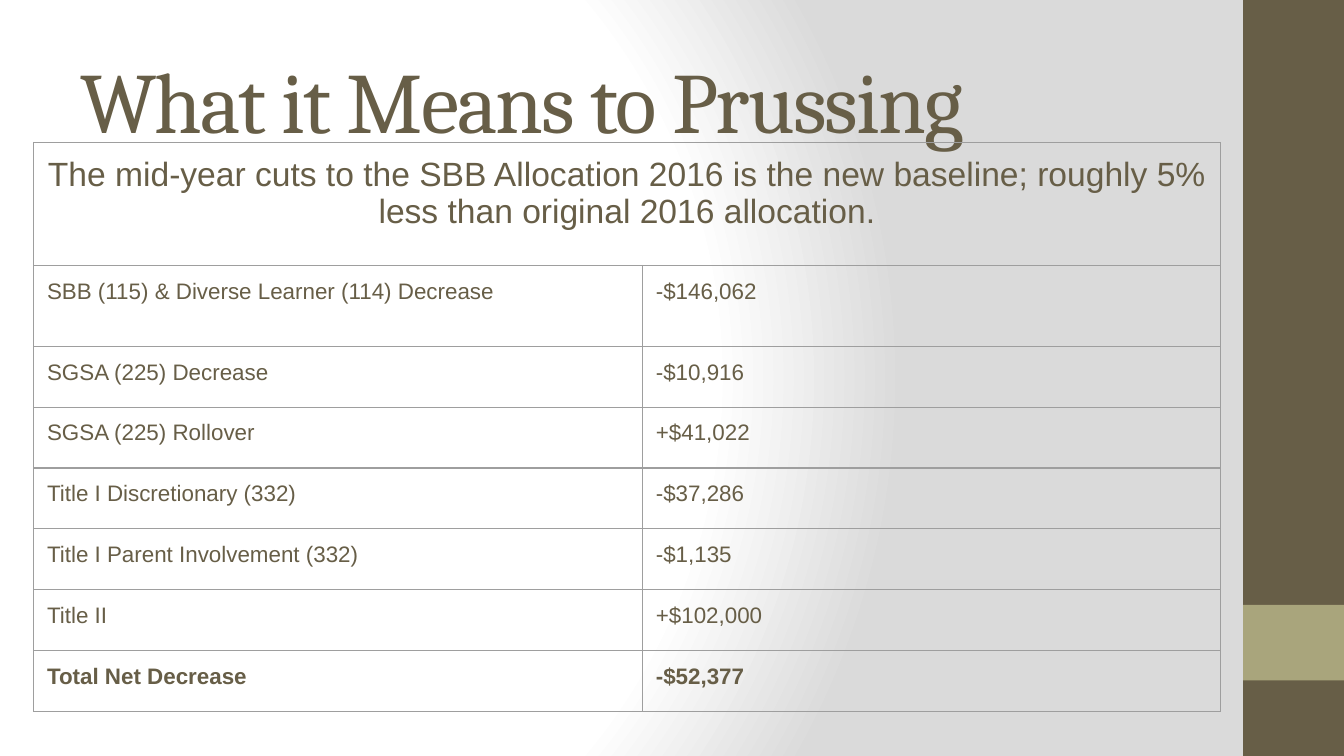
from lxml import etree
from pptx import Presentation
from pptx.dml.color import RGBColor
from pptx.enum.shapes import MSO_SHAPE
from pptx.enum.text import MSO_ANCHOR, PP_ALIGN
from pptx.oxml import parse_xml
from pptx.oxml.ns import qn
from pptx.util import Inches, Pt

RECT = MSO_SHAPE.RECTANGLE
BOTTOM = MSO_ANCHOR.BOTTOM
LEFT, CENTER = PP_ALIGN.LEFT, PP_ALIGN.CENTER

BROWN = RGBColor(0x67, 0x5E, 0x47)
OLIVE = RGBColor(0xA9, 0xA5, 0x7C)
WHITE = RGBColor(0xFF, 0xFF, 0xFF)
SILVER = RGBColor(0xDA, 0xDA, 0xDA)
GRAY = RGBColor(0x9E, 0x9E, 0x9E)

A_NS = 'xmlns:a="http://schemas.openxmlformats.org/drawingml/2006/main"'
COLS, ROWS = 40, 22.5
UNIT = 0.25  # inches per grid column and row

HEADING = ("The mid-year cuts to the SBB Allocation 2016 is the new baseline; "
           "roughly 5% less than original 2016 allocation.")
BUDGET = [
    ("SBB (115) & Diverse Learner (114) Decrease", "-$146,062"),
    ("SGSA (225) Decrease", "-$10,916"),
    ("SGSA (225) Rollover", "+$41,022"),
    ("Title I Discretionary (332)", "-$37,286"),
    ("Title I Parent Involvement (332)", "-$1,135"),
    ("Title II", "+$102,000"),
    ("Total Net Decrease", "-$52,377"),
]


def grid(n):
    return Inches(n * UNIT)


class Deck:
    """Holds the style and the current slide; lengths are grid units."""
    title_font, body_font = "Cambria", "Arial"
    inset = Inches(0.1)

    def __init__(self):
        self.prs = Presentation()
        self.prs.slide_width, self.prs.slide_height = grid(COLS), grid(ROWS)
        self.s = self.prs.slides.add_slide(self.prs.slide_layouts[6])

    def radial_background(self, stops, left, top, right, bottom):
        """Fill the background from (percent, colour) stops around a focus rectangle."""
        self.s.background.fill.solid()
        gs = "".join(f'<a:gs pos="{pos * 1000}"><a:srgbClr val="{color}"/></a:gs>'
                     for pos, color in stops)
        gradient = parse_xml(
            f'<a:gradFill {A_NS} rotWithShape="1"><a:gsLst>{gs}</a:gsLst>'
            f'<a:path path="circle"><a:fillToRect l="{left * 1000}" t="{top * 1000}" '
            f'r="{right * 1000}" b="{bottom * 1000}"/></a:path></a:gradFill>')
        bg = self.s.element.find(".//" + qn("p:bgPr"))
        bg.replace(bg.find(qn("a:solidFill")), gradient)

    def band(self, x, y, w, h, color):
        sp = self.s.shapes.add_shape(RECT, grid(x), grid(y), grid(w), grid(h))
        sp.shadow.inherit = False
        sp.fill.solid()
        sp.fill.fore_color.rgb = color
        sp.line.fill.background()

    def title(self, x, y, w, h, text):
        tf = self.s.shapes.add_textbox(grid(x), grid(y), grid(w), grid(h)).text_frame
        tf.word_wrap = True
        tf.vertical_anchor = BOTTOM
        tf.margin_left = tf.margin_right = self.inset
        tf.margin_top = tf.margin_bottom = self.inset
        p = tf.paragraphs[0]
        r = p.add_run()
        r.text = text
        r.font.size, r.font.name = Pt(46), self.title_font
        r.font.color.rgb = BROWN
        r.font._element.set("spc", "-100")

    def cell(self, cell, text, size, align=LEFT, bold=False):
        cell.margin_left = cell.margin_right = self.inset
        cell.margin_top = cell.margin_bottom = self.inset
        cell.text = text
        p = cell.text_frame.paragraphs[0]
        p.alignment = align
        p.font.size, p.font.name, p.font.bold = Pt(size), self.body_font, bold
        p.font.color.rgb = BROWN

    def border(self, cell):
        """Clear the cell's fill and draw a thin line on all four sides."""
        cell.fill.background()
        tc_pr = cell._tc.get_or_add_tcPr()
        for i, side in enumerate(("lnL", "lnR", "lnT", "lnB")):
            ln = etree.Element(qn("a:" + side), w=str(Pt(0.75)))
            fill = etree.SubElement(ln, qn("a:solidFill"))
            etree.SubElement(fill, qn("a:srgbClr"), val=str(GRAY))
            tc_pr.insert(i, ln)

    def table(self, x, y, widths, heights, heading, rows):
        frame = self.s.shapes.add_table(len(heights), len(widths), grid(x), grid(y),
                                        grid(sum(widths)), grid(sum(heights)))
        table = frame.table
        table.first_row = table.horz_banding = False
        for column, w in zip(table.columns, widths):
            column.width = grid(w)
        for row, h in zip(table.rows, heights):
            row.height = grid(h)
        table.cell(0, 0).merge(table.cell(0, len(widths) - 1))
        self.cell(table.cell(0, 0), heading, 18, CENTER)
        for i, values in enumerate(rows, 1):
            for j, text in enumerate(values):
                self.cell(table.cell(i, j), text, 12, bold=i == len(rows))
        for cell in table.iter_cells():
            self.border(cell)


def main():
    deck = Deck()
    deck.radial_background([(0, WHITE), (75, WHITE), (100, SILVER)], 20, 50, 100, 50)
    deck.band(37, 0, 3, ROWS, BROWN)
    deck.band(37, 18, 3, 2.25, OLIVE)
    deck.title(2, 0.45, 32, 4.45, "What it Means to Prussing")
    deck.table(1, 4.24, [18.12, 17.2], [3.66, 2.41] + [1.81] * 6, HEADING, BUDGET)
    deck.prs.save("out.pptx")


if __name__ == "__main__":
    main()
